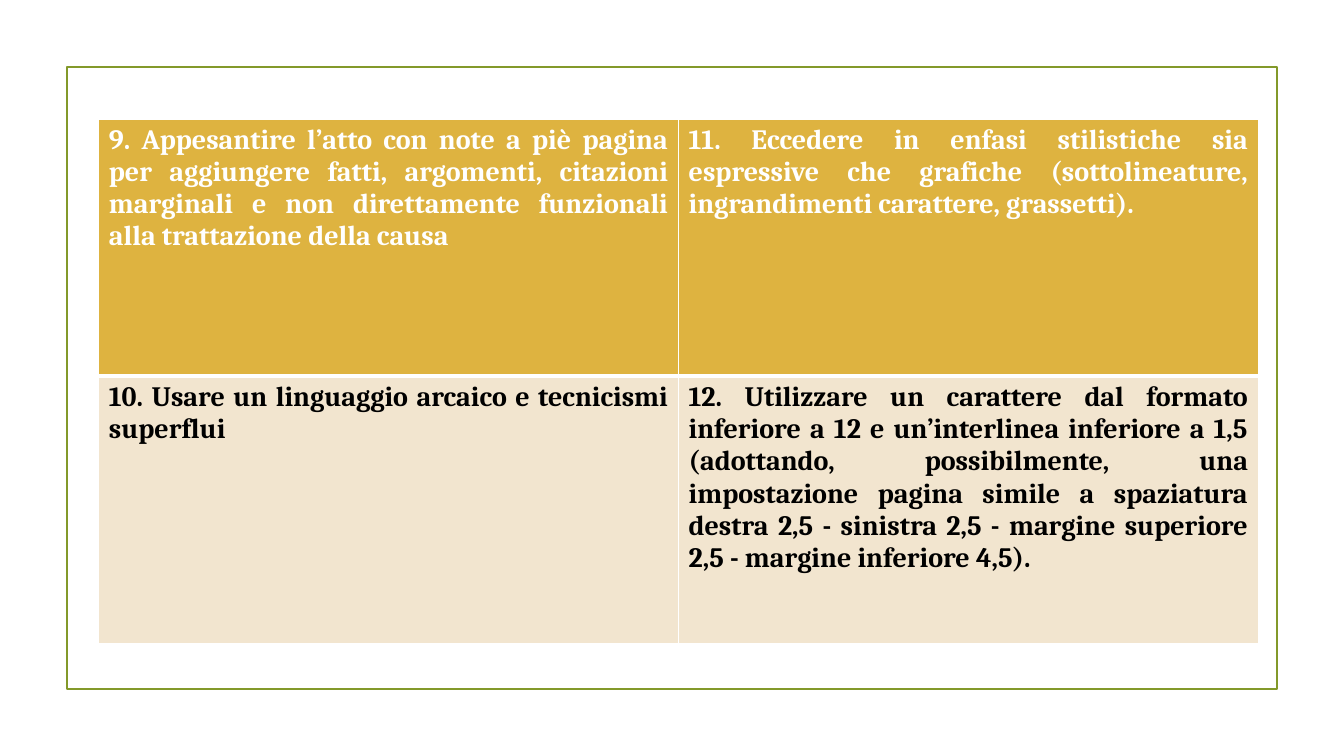
from lxml import etree
from pptx import Presentation
from pptx.dml.color import RGBColor
from pptx.enum.shapes import MSO_SHAPE
from pptx.enum.text import PP_ALIGN
from pptx.oxml.ns import qn
from pptx.util import Inches, Pt

RECTANGLE = MSO_SHAPE.RECTANGLE
JUSTIFY = PP_ALIGN.JUSTIFY

GREEN = RGBColor(0x83, 0x99, 0x2A)
GOLD = RGBColor(0xDE, 0xB3, 0x40)
CREAM = RGBColor(0xF2, 0xE5, 0xCF)
WHITE = RGBColor(0xFF, 0xFF, 0xFF)
BLACK = RGBColor(0x00, 0x00, 0x00)

FONT = "Cambria"
BLANK_LAYOUT = 6
PAGE_WIDTH, PAGE_HEIGHT = Inches(13.33), Inches(7.5)
COLUMN_WIDTH = Inches(5.75)
ROW_HEIGHTS = [Inches(2.55), Inches(2.66)]
THIN, THICK = Pt(1), Pt(3)

# Fill and text colour of each row
ROW_COLORS = [(GOLD, WHITE), (CREAM, BLACK)]
ADVICE = [
    [
        "9. Appesantire l’atto con note a piè pagina per aggiungere fatti, argomenti, "
        "citazioni marginali e non direttamente funzionali alla trattazione della causa",
        "11. Eccedere in enfasi stilistiche sia espressive che grafiche "
        "(sottolineature, ingrandimenti carattere, grassetti).",
    ],
    [
        "10. Usare un linguaggio arcaico e tecnicismi superflui",
        "12. Utilizzare un carattere dal formato inferiore a 12 e un’interlinea "
        "inferiore a 1,5 (adottando, possibilmente, una impostazione pagina simile a "
        "spaziatura destra 2,5 - sinistra 2,5 - margine superiore 2,5 - margine "
        "inferiore 4,5).",
    ],
]


def add_frame(page):
    """Draw the outline, centred across the page."""
    width, height = Inches(12), Inches(6.17)
    left, top = (PAGE_WIDTH - width) // 2, (PAGE_HEIGHT - height) // 2
    frame = page.shapes.add_shape(RECTANGLE, left, top, width, height)
    frame.shadow.inherit = False
    frame.fill.background()
    frame.line.color.rgb = GREEN
    frame.line.width = Pt(1.25)


def add_borders(cell, top, bottom):
    """Give a cell white borders; call before filling it."""
    properties = cell._tc.get_or_add_tcPr()
    widths = {"a:lnL": THIN, "a:lnR": THIN, "a:lnT": top, "a:lnB": bottom}
    for tag, width in widths.items():
        line = etree.SubElement(properties, qn(tag), w=str(width))
        fill = etree.SubElement(line, qn("a:solidFill"))
        etree.SubElement(fill, qn("a:srgbClr"), val=str(WHITE))


def write_cell(cell, text, fill_color, text_color):
    cell.fill.solid()
    cell.fill.fore_color.rgb = fill_color
    para = cell.text_frame.paragraphs[0]
    para.alignment = JUSTIFY
    span = para.add_run()
    span.text = text
    span.font.name = FONT
    span.font.size = Pt(20)
    span.font.bold = True
    span.font.color.rgb = text_color


def add_advice_table(page):
    rows, columns = len(ADVICE), len(ADVICE[0])
    table = page.shapes.add_table(
        rows, columns, Inches(0.98), Inches(1.18),
        COLUMN_WIDTH * columns, sum(ROW_HEIGHTS),
    ).table
    for column in table.columns:
        column.width = COLUMN_WIDTH
    for row, texts in enumerate(ADVICE):
        table.rows[row].height = ROW_HEIGHTS[row]
        # The thick rule lies under the first row
        top = THICK if row == 1 else THIN
        bottom = THICK if row == 0 else THIN
        for column, text in enumerate(texts):
            cell = table.cell(row, column)
            add_borders(cell, top, bottom)
            write_cell(cell, text, *ROW_COLORS[row])


def main():
    deck = Presentation()
    deck.slide_width, deck.slide_height = PAGE_WIDTH, PAGE_HEIGHT
    page = deck.slides.add_slide(deck.slide_layouts[BLANK_LAYOUT])
    add_frame(page)
    add_advice_table(page)
    deck.save("out.pptx")


if __name__ == "__main__":
    main()
